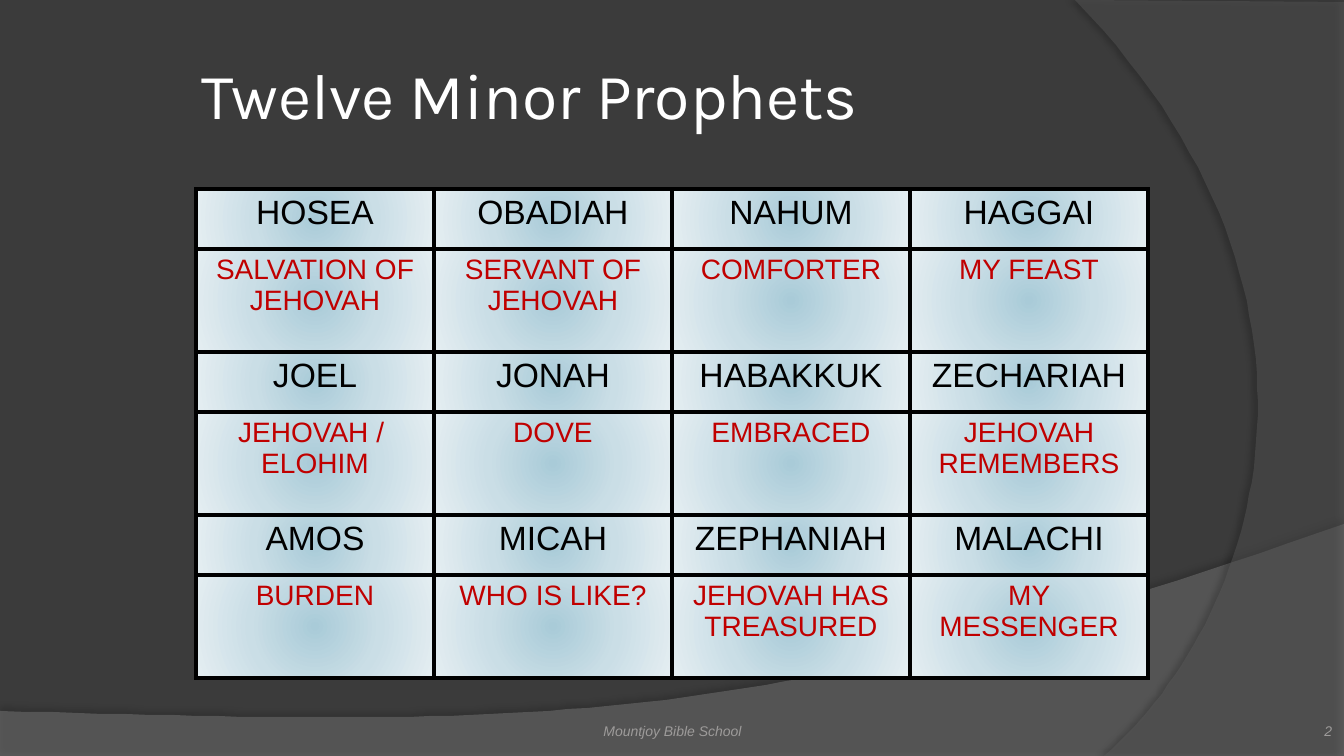
from lxml import etree
from pptx import Presentation
from pptx.dml.color import RGBColor
from pptx.enum.text import MSO_ANCHOR, PP_ALIGN
from pptx.oxml import parse_xml
from pptx.oxml.ns import qn
from pptx.util import Emu, Pt

LEFT, CENTER, RIGHT = PP_ALIGN.LEFT, PP_ALIGN.CENTER, PP_ALIGN.RIGHT
MIDDLE, BOTTOM = MSO_ANCHOR.MIDDLE, MSO_ANCHOR.BOTTOM
PX = 12192000 / 1344
DRAWING_NS = 'xmlns:a="http://schemas.openxmlformats.org/drawingml/2006/main"'

THEME = {
    "background": "3B3B3B",
    "title": ("Karla", 46, "FFFFFF", False),
    "name": ("Arial", 24, "000000", False),
    "meaning": ("Arial", 20, "C00000", False),
    "footer": ("Arial", 10, "9D9B9A", True),
    "border": "000000",
    "glow": ((0, "A9CBD8"), (50, "CADEE6"), (100, "E5EEF2")),
}


def px(length):
    return Emu(round(length * PX))


def write(frame, text, style, align):
    font_name, size, color, italic = THEME[style]
    paragraph = frame.paragraphs[0]
    paragraph.text = text
    paragraph.alignment = align
    paragraph.font.name = font_name
    paragraph.font.size = Pt(size)
    paragraph.font.italic = italic
    paragraph.font.color.rgb = RGBColor.from_string(color)


prs = Presentation()
prs.slide_width, prs.slide_height = px(1344), px(756)
slide = prs.slides.add_slide(prs.slide_layouts[6])
slide.background.fill.solid()
slide.background.fill.fore_color.rgb = RGBColor.from_string(THEME["background"])

SWEEPS = [
    ([(0, 711), (0, 756), (1344, 756)],
     [(1344, 524), (751, 735), (525, 725), (0, 711)],
     "7F7F7F", 45, 35, 3.5, 270),
    ([(1344, 2), (1344, 756)],
     [(1104, 756), (1256, 624), (1368, 302), (1075, 0)],
     "5E5E5E", 40, 45, 4, 180),
]
CURVE_STEPS = 60
for corners, curve, color, opacity, shade, distance, angle in SWEEPS:
    outline = list(corners)
    for step in range(CURVE_STEPS + 1):
        t = step / CURVE_STEPS
        weights = ((1 - t) ** 3, 3 * t * (1 - t) ** 2, 3 * t ** 2 * (1 - t), t ** 3)
        outline.append(tuple(
            sum(w * point[axis] for w, point in zip(weights, curve)) for axis in (0, 1)))
    builder = slide.shapes.build_freeform(*outline[0], scale=PX)
    builder.add_line_segments(outline[1:], close=True)
    sweep = builder.convert_to_shape()
    sweep.line.fill.background()
    sweep.fill.solid()
    sweep.fill.fore_color.rgb = RGBColor.from_string(color)
    sweep.shadow.inherit = False
    properties = sweep.element.spPr
    fill_color = properties.find(qn("a:solidFill"))[0]
    etree.SubElement(fill_color, qn("a:alpha"), val=str(opacity * 1000))
    properties.find(qn("a:effectLst")).append(parse_xml(
        f'<a:outerShdw {DRAWING_NS} blurRad="{Pt(4)}" dist="{Pt(distance)}" '
        f'dir="{angle * 60000}" algn="ctr" rotWithShape="0"><a:srgbClr val="000000">'
        f'<a:alpha val="{shade * 1000}"/></a:srgbClr></a:outerShdw>'))

LABELS = [
    ("Twelve Minor Prophets", "title", (196, 31, 952, 126), LEFT, MIDDLE, (5, 5, 5, 5)),
    ("Mountjoy Bible School", "footer", (460, 688, 425, 51), CENTER, BOTTOM, (0, 5, 0, 0)),
    ("2", "footer", (1052, 688, 280, 51), RIGHT, BOTTOM, (0, 0, 0, 0)),
]
for text, style, bounds, align, anchor, insets in LABELS:
    frame = slide.shapes.add_textbox(*map(px, bounds)).text_frame
    frame.word_wrap = True
    frame.vertical_anchor = anchor
    (frame.margin_left, frame.margin_top,
     frame.margin_right, frame.margin_bottom) = map(px, insets)
    write(frame, text, style, align)

PROPHETS = [
    ["HOSEA", "OBADIAH", "NAHUM", "HAGGAI"],
    ["SALVATION OF JEHOVAH", "SERVANT OF JEHOVAH", "COMFORTER", "MY FEAST"],
    ["JOEL", "JONAH", "HABAKKUK", "ZECHARIAH"],
    ["JEHOVAH / \vELOHIM", "DOVE", "EMBRACED", "JEHOVAH REMEMBERS"],
    ["AMOS", "MICAH", "ZEPHANIAH", "MALACHI"],
    ["BURDEN", "WHO IS LIKE?", "JEHOVAH HAS TREASURED", "MY MESSENGER"],
]
ROW_KINDS = [("name", 60), ("meaning", 103)]
COLUMN_WIDTH = 238
stops = "".join(f'<a:gs pos="{position * 1000}"><a:srgbClr val="{color}"/></a:gs>'
                for position, color in THEME["glow"])
glow = (f'<a:gradFill {DRAWING_NS} rotWithShape="1"><a:gsLst>{stops}</a:gsLst>'
        '<a:path path="circle"><a:fillToRect l="50000" t="50000" r="50000" b="50000"/>'
        '</a:path></a:gradFill>')

grid = slide.shapes.add_table(
    len(PROPHETS), len(PROPHETS[0]), px(196), px(189), px(952), px(489)).table
grid.first_row = False
grid.horz_banding = False
for column in grid.columns:
    column.width = px(COLUMN_WIDTH)
for r, entries in enumerate(PROPHETS):
    style, height = ROW_KINDS[r % 2]
    grid.rows[r].height = px(height)
    for c, entry in enumerate(entries):
        cell = grid.cell(r, c)
        write(cell.text_frame, entry, style, CENTER)
        cell_properties = cell._tc.get_or_add_tcPr()
        for side in ("lnL", "lnR", "lnT", "lnB"):
            cell_properties.append(parse_xml(
                f'<a:{side} {DRAWING_NS} w="{Pt(3)}"><a:solidFill>'
                f'<a:srgbClr val="{THEME["border"]}"/></a:solidFill></a:{side}>'))
        cell_properties.append(parse_xml(glow))

prs.save("out.pptx")
